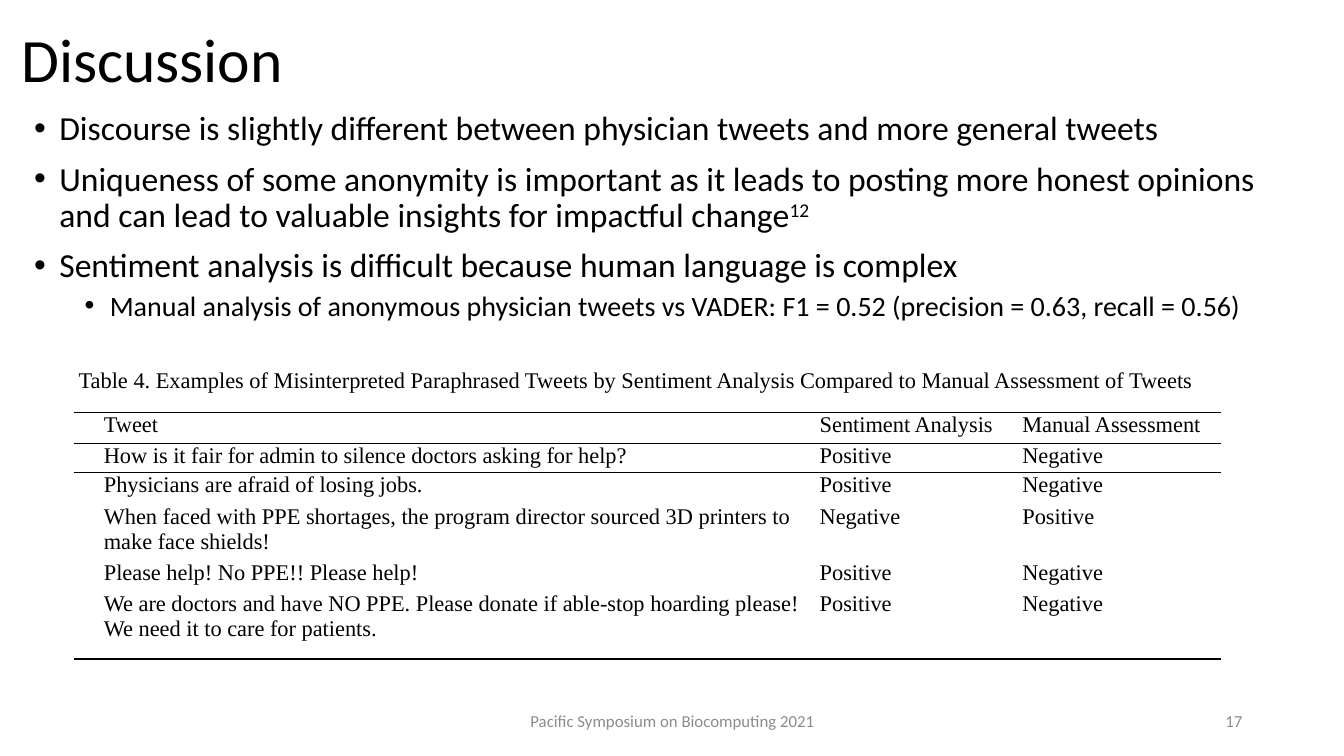
from lxml import etree
from pptx import Presentation
from pptx.dml.color import RGBColor
from pptx.enum.text import MSO_ANCHOR, PP_ALIGN
from pptx.oxml.ns import qn
from pptx.util import Pt

LEFT, CENTER, RIGHT = PP_ALIGN.LEFT, PP_ALIGN.CENTER, PP_ALIGN.RIGHT
TOP, MIDDLE = MSO_ANCHOR.TOP, MSO_ANCHOR.MIDDLE

PX = 9144  # EMU per px, 100 px to the inch
SLIDE_SIZE = (1333, 750)
COLORS = {"text": "000000", "muted": "8C8C8C", "rule": "000000"}
SANS, SERIF = "Calibri", "Times New Roman"

TITLE = "Discussion"
TITLE_BOX = (11, 18, 1150, 88)

# level, text, superscript
BULLETS = [
    (0, "Discourse is slightly different between physician tweets and more general tweets", ""),
    (0, "Uniqueness of some anonymity is important as it leads to posting more honest opinions "
        "and can lead to valuable insights for impactful change", "12"),
    (0, "Sentiment analysis is difficult because human language is complex", ""),
    (1, "Manual analysis of anonymous physician tweets vs VADER: "
        "F1 = 0.52 (precision = 0.63, recall = 0.56)", ""),
]
BULLETS_BOX = (24, 106, 1235, 476)
# per level: left margin px, text size, space before
BULLET_LEVELS = [(25, 24, 10), (75, 20, 5)]
BULLET_HANG = 25

# text, box, alignment
FOOTERS = [
    ("Pacific Symposium on Biocomputing 2021", (442, 695, 450, 40), CENTER),
    ("17", (942, 695, 300, 40), RIGHT),
]

CAPTION = ("Table 4. Examples of Misinterpreted Paraphrased Tweets by Sentiment Analysis "
           "Compared to Manual Assessment of Tweets")
TABLE_ROWS = [
    (CAPTION, "", ""),
    ("Tweet", "Sentiment Analysis", "Manual Assessment"),
    ("How is it fair for admin to silence doctors asking for help?", "Positive", "Negative"),
    ("Physicians are afraid of losing jobs.", "Positive", "Negative"),
    ("When faced with PPE shortages, the program director sourced 3D printers to make face shields!",
     "Negative", "Positive"),
    ("Please help! No PPE!! Please help!", "Positive", "Negative"),
    ("We are doctors and have NO PPE. Please donate if able-stop hoarding please! "
     "We need it to care for patients.", "Positive", "Negative"),
]
TABLE_ORIGIN = (73, 366)
COLUMN_WIDTHS = [730, 194, 214]
ROW_HEIGHTS = [43, 31, 29, 32, 55, 31, 67]
CELL_INDENTS = [30, 10, 17]
CAPTION_INDENT = 5
RULED_ROWS = {0, 1, len(TABLE_ROWS) - 1}  # rows with a line below
PLAIN_TABLE_STYLE = "{2D5ABB26-0587-4C30-8999-92F81FD0307C}"


def px(*lengths):
    return [length * PX for length in lengths]


def set_all(target, values):
    for name, value in values.items():
        setattr(target, name, value)


def add_run(paragraph, text, size, font=SANS, color="text"):
    run = paragraph.add_run()
    run.text = text
    set_all(run.font, {"size": Pt(size), "name": font})
    run.font.color.rgb = RGBColor.from_string(COLORS[color])
    return run


def indent(paragraph, margin, first_line=0):
    properties = paragraph._p.get_or_add_pPr()
    properties.set("marL", str(margin * PX))
    properties.set("indent", str(first_line * PX))
    return properties


def add_title(slide):
    title = slide.shapes.title
    set_all(title, dict(zip(("left", "top", "width", "height"), px(*TITLE_BOX))))
    title.text_frame.vertical_anchor = MIDDLE
    paragraph = title.text_frame.paragraphs[0]
    set_all(paragraph, {"alignment": LEFT, "line_spacing": 0.9})
    add_run(paragraph, TITLE, 44)


def add_text_frame(slide, box, anchor):
    frame = slide.shapes.add_textbox(*px(*box)).text_frame
    set_all(frame, {"word_wrap": True, "vertical_anchor": anchor})
    return frame


def add_bullets(slide):
    frame = add_text_frame(slide, BULLETS_BOX, TOP)
    for index, (level, text, superscript) in enumerate(BULLETS):
        paragraph = frame.add_paragraph() if index else frame.paragraphs[0]
        margin, size, space = BULLET_LEVELS[level]
        properties = indent(paragraph, margin, -BULLET_HANG)
        etree.SubElement(properties, qn("a:buFont"), typeface="Arial")
        etree.SubElement(properties, qn("a:buChar"), char="•")
        set_all(paragraph, {"level": level, "line_spacing": 0.9,
                            "space_before": Pt(space if index else 0)})
        add_run(paragraph, text, size)
        if superscript:
            run = add_run(paragraph, superscript, size)
            run._r.get_or_add_rPr().set("baseline", "30000")


def add_footers(slide):
    for text, box, alignment in FOOTERS:
        paragraph = add_text_frame(slide, box, MIDDLE).paragraphs[0]
        paragraph.alignment = alignment
        add_run(paragraph, text, 12, color="muted")


def add_rules(cell, sides):
    """Draw 1 pt lines on the given sides, ahead of the fill as the schema asks."""
    properties = cell._tc.get_or_add_tcPr()
    for position, side in enumerate(sides):
        line = etree.Element(qn(f"a:ln{side}"), w=str(Pt(1)))
        fill = etree.SubElement(line, qn("a:solidFill"))
        etree.SubElement(fill, qn("a:srgbClr"), val=COLORS["rule"])
        properties.insert(position, line)


def add_tweet_table(slide):
    size = (sum(COLUMN_WIDTHS), sum(ROW_HEIGHTS))
    frame = slide.shapes.add_table(len(TABLE_ROWS), len(COLUMN_WIDTHS), *px(*TABLE_ORIGIN, *size))
    table = frame.table
    set_all(table, {"first_row": False, "horz_banding": False})
    table._tbl.tblPr.find(qn("a:tableStyleId")).text = PLAIN_TABLE_STYLE
    for column, width in zip(table.columns, px(*COLUMN_WIDTHS)):
        column.width = width
    for row, height in zip(table.rows, px(*ROW_HEIGHTS)):
        row.height = height
    table.cell(0, 0).merge(table.cell(0, len(COLUMN_WIDTHS) - 1))

    for row_index, texts in enumerate(TABLE_ROWS):
        sides = [side for side, ruled_row in (("T", row_index - 1), ("B", row_index))
                 if ruled_row in RULED_ROWS]
        for column_index, text in enumerate(texts):
            cell = table.cell(row_index, column_index)
            set_all(cell, {"margin_left": 0, "margin_right": 0, "margin_top": 0,
                           "margin_bottom": 0, "vertical_anchor": TOP})
            cell.fill.background()
            add_rules(cell, sides)
            if text:
                paragraph = cell.text_frame.paragraphs[0]
                indent(paragraph, CELL_INDENTS[column_index] if row_index else CAPTION_INDENT)
                add_run(paragraph, text, 16, SERIF)


def main():
    presentation = Presentation()
    presentation.slide_width, presentation.slide_height = px(*SLIDE_SIZE)
    slide = presentation.slides.add_slide(presentation.slide_layouts.get_by_name("Title Only"))
    add_title(slide)
    add_bullets(slide)
    add_footers(slide)
    add_tweet_table(slide)
    presentation.save("out.pptx")


if __name__ == "__main__":
    main()
